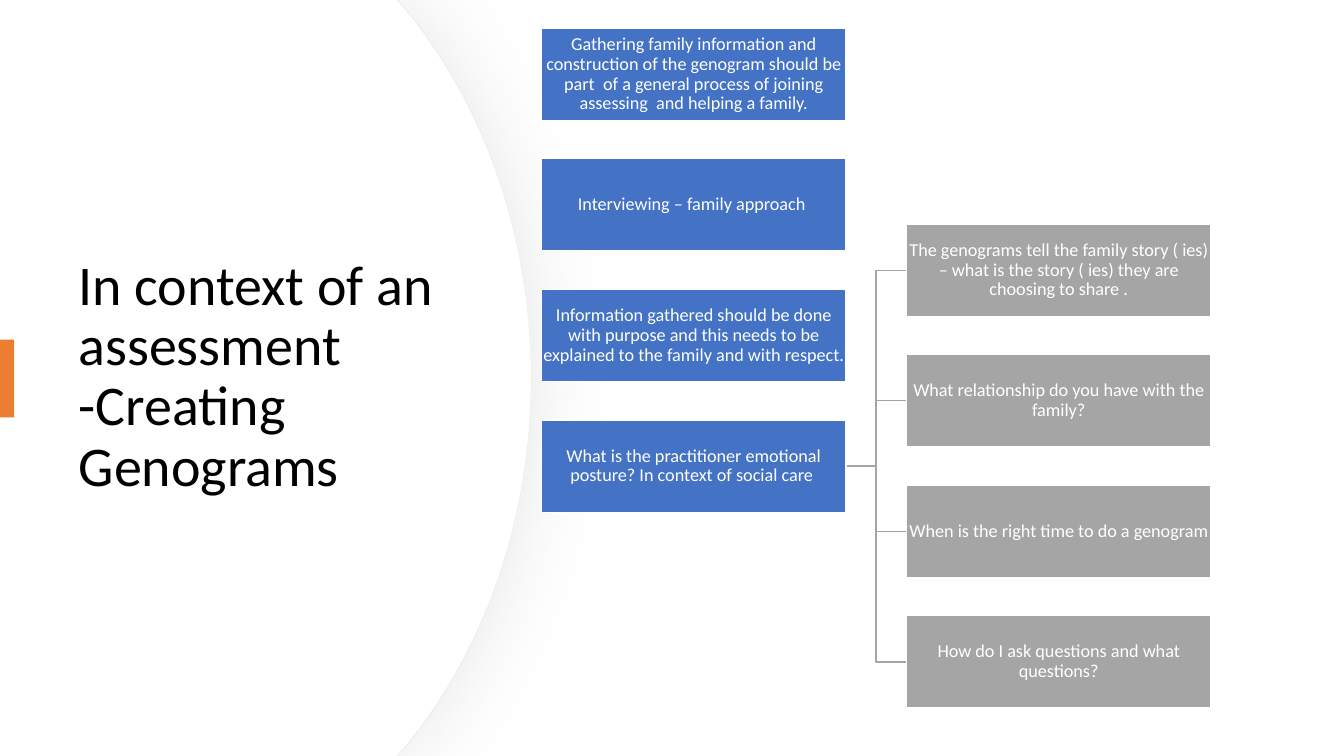
"""Build the slide on creating genograms in the context of an assessment."""
from lxml import etree
from pptx import Presentation
from pptx import util as u
from pptx.dml.color import RGBColor
from pptx.enum import shapes, text
from pptx.oxml import parse_xml
from pptx.oxml.ns import nsdecls, qn

WHITE = RGBColor(0xFF, 0xFF, 0xFF)
BLACK = RGBColor(0x00, 0x00, 0x00)
EDGE = RGBColor(0xEF, 0xEF, 0xEF)
ORANGE = RGBColor(0xED, 0x7D, 0x31)
BLUE = RGBColor(0x44, 0x72, 0xC4)
GRAY = RGBColor(0xA5, 0xA5, 0xA5)

PAGE_HEIGHT = 19.05
BOX_WIDTH, BOX_HEIGHT = 7.68, 2.33
ROW_STEP = 3.29
FIRST_TOP = 0.71

COLUMNS = [
    (13.64, FIRST_TOP, BLUE, [
        "Gathering family information and construction of the genogram should be "
        "part  of a general process of joining assessing  and helping a family.",
        "Interviewing – family approach ",
        "Information gathered should be done with purpose and this needs to be "
        "explained to the family and with respect.",
        "What is the practitioner emotional posture? In context of social care ",
    ]),
    (22.84, FIRST_TOP + 1.5 * ROW_STEP, GRAY, [
        "The genograms tell the family story ( ies) – what is the story ( ies) "
        "they are choosing to share .",
        "What relationship do you have with the family?",
        "When is the right time to do a genogram",
        "How do I ask questions and what questions?",
    ]),
]


def style_span(span, size, color):
    span.font.name = "Calibri"
    span.font.size = u.Pt(size)
    span.font.color.rgb = color


deck = Presentation()
deck.slide_width, deck.slide_height = u.Cm(33.87), u.Cm(PAGE_HEIGHT)
page = deck.slides.add_slide(deck.slide_layouts[5])
page.background.fill.solid()
page.background.fill.fore_color.rgb = WHITE

upper_curve = [(12.17, 2.59), (13.39, 5.89), (13.39, PAGE_HEIGHT / 2)]
lower_curve = [(13.39, 13.16), (12.17, 16.46), (10.19, 18.85)]
corners = [(10.01, 0), (10.19, 0.2), upper_curve[-1], lower_curve[-1],
           (10.01, PAGE_HEIGHT)]

for inset, outlined in [(0, True), (0.03, False)]:
    builder = page.shapes.build_freeform(0, 0)
    builder.add_line_segments(
        [(u.Cm(x - inset), u.Cm(y)) for x, y in corners] + [(0, u.Cm(PAGE_HEIGHT))],
        close=True)
    panel = builder.convert_to_shape()
    segments = list(panel._element.iter(qn("a:lnTo")))
    for segment, curve in zip(segments[2:4], (upper_curve, lower_curve)):
        bend = etree.Element(qn("a:cubicBezTo"))
        for x, y in curve:
            etree.SubElement(bend, qn("a:pt"), x=str(u.Cm(x - inset)), y=str(u.Cm(y)))
        segment.getparent().replace(segment, bend)
    panel.shadow.inherit = False
    panel.fill.solid()
    panel.fill.fore_color.rgb = WHITE
    if outlined:
        panel.line.color.rgb = EDGE
        panel.line.width = u.Pt(0.75)
        effects = panel._element.spPr.find(qn("a:effectLst"))
        effects.append(parse_xml(
            f'<a:outerShdw {nsdecls("a")} blurRad="{u.Pt(50)}" dist="{u.Pt(7)}" dir="0">'
            '<a:srgbClr val="D9D9D9"><a:alpha val="50000"/></a:srgbClr></a:outerShdw>'))
    else:
        panel.line.fill.background()

title = page.shapes.title
page.shapes._spTree.append(title._element)
title.left, title.top = u.Cm(1.73), u.Cm(3.23)
title.width, title.height = u.Cm(10.01), u.Cm(12.57)
title.text_frame.word_wrap = True
title.text_frame.auto_size = text.MSO_AUTO_SIZE.NONE
title.text_frame.vertical_anchor = text.MSO_ANCHOR.MIDDLE
para = title.text_frame.paragraphs[0]
para.alignment = text.PP_ALIGN.LEFT
para.line_spacing = 0.9
style_span(para.add_run(), 40, BLACK)
para.runs[0].text = "In context of an assessment"
para.add_line_break()
style_span(para.add_run(), 40, BLACK)
para.runs[1].text = "-Creating  Genograms"

accent = page.shapes.add_shape(shapes.MSO_SHAPE.RECTANGLE, 0, u.Cm(8.56), u.Cm(0.36), u.Cm(1.96))
accent.shadow.inherit = False
accent.fill.solid()
accent.fill.fore_color.rgb = ORANGE
accent.line.fill.background()

box_columns = []
for left, top, color, labels in COLUMNS:
    boxes = []
    for row, label in enumerate(labels):
        box = page.shapes.add_shape(
            shapes.MSO_SHAPE.RECTANGLE, u.Cm(left), u.Cm(top + row * ROW_STEP),
            u.Cm(BOX_WIDTH), u.Cm(BOX_HEIGHT))
        box.shadow.inherit = False
        box.fill.solid()
        box.fill.fore_color.rgb = color
        box.line.color.rgb = WHITE
        box.line.width = u.Pt(1)
        frame = box.text_frame
        frame.word_wrap = True
        frame.vertical_anchor = text.MSO_ANCHOR.MIDDLE
        frame.margin_left = frame.margin_right = u.Cm(0.02)
        frame.margin_top = frame.margin_bottom = u.Cm(0.02)
        para = frame.paragraphs[0]
        para.alignment = text.PP_ALIGN.CENTER
        para.line_spacing = 0.9
        span = para.add_run()
        span.text = label
        style_span(span, 13, WHITE)
        boxes.append(box)
    box_columns.append(boxes)

topics, questions = box_columns
for question in reversed(questions):
    branch = page.shapes.add_connector(shapes.MSO_CONNECTOR.ELBOW, 0, 0, 0, 0)
    branch.begin_connect(topics[-1], 3)
    branch.end_connect(question, 1)
    branch.line.color.rgb = GRAY
    branch.line.width = u.Pt(1)
    etree.SubElement(branch._element.spPr, qn("a:effectLst"))
    topics[0]._element.addprevious(branch._element)

deck.save("out.pptx")
